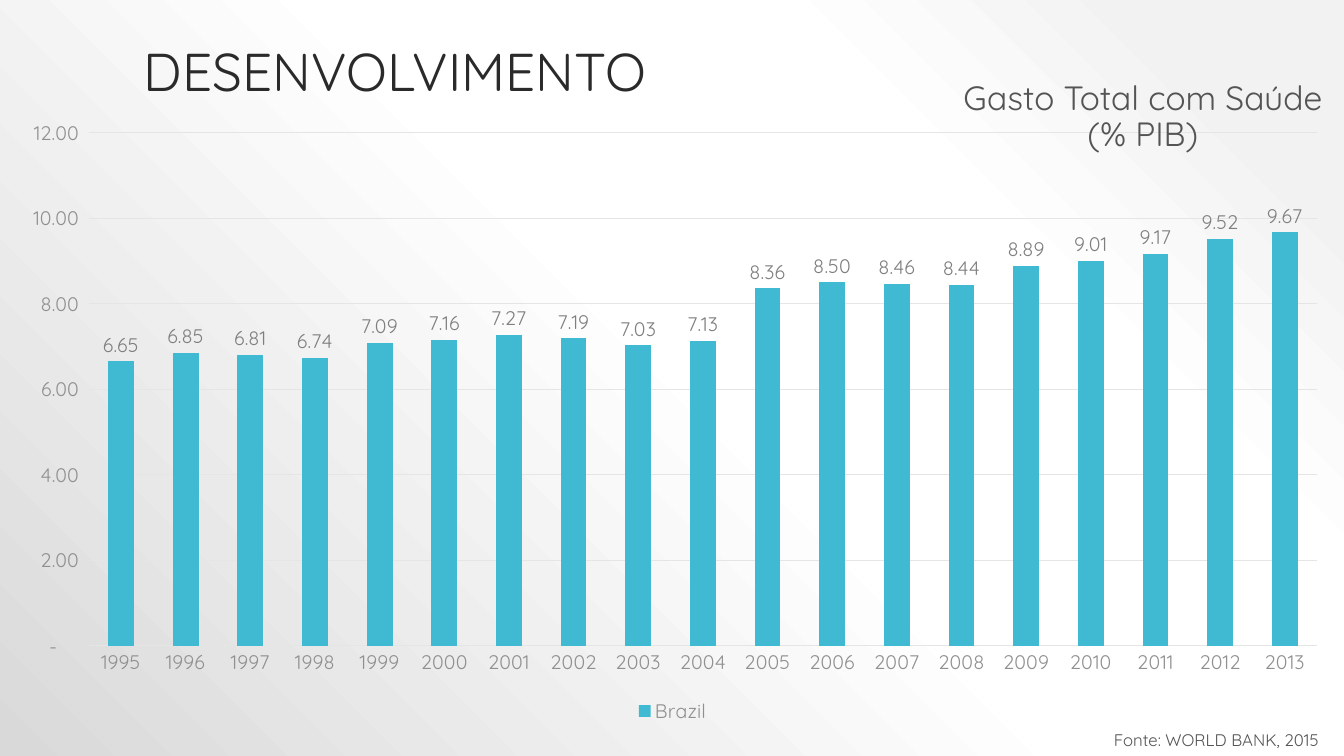
from lxml import etree
from pptx import Presentation
from pptx.chart.data import CategoryChartData
from pptx.dml.color import RGBColor
from pptx.enum.chart import XL_CHART_TYPE, XL_LABEL_POSITION, XL_LEGEND_POSITION, XL_TICK_MARK
from pptx.enum.text import MSO_ANCHOR, PP_ALIGN
from pptx.oxml import parse_xml
from pptx.util import Inches, Pt

COLUMNS = XL_CHART_TYPE.COLUMN_CLUSTERED
OUTSIDE = XL_LABEL_POSITION.OUTSIDE_END
BOTTOM_LEGEND = XL_LEGEND_POSITION.BOTTOM
NO_TICK = XL_TICK_MARK.NONE
TOP, BOTTOM = MSO_ANCHOR.TOP, MSO_ANCHOR.BOTTOM
LEFT, CENTER = PP_ALIGN.LEFT, PP_ALIGN.CENTER

# Content
FONT = "Quicksand"
COLORS = {"title": "2A2A2A", "text": "545454", "axis": "909090",
          "label": "7F7F7F", "grid": "E5E5E5", "bar": "40BAD2"}
BACKGROUND_STOPS = [(10, "F2F2F2"), (28, "FFFFFF"), (48, "FFFFFF"), (100, "D9D9D9")]
FIRST_YEAR = 1995
SERIES_NAME = "Brazil"
SPENDING = [6.65, 6.85, 6.81, 6.74, 7.09, 7.16, 7.27, 7.19, 7.03, 7.13,
            8.36, 8.50, 8.46, 8.44, 8.89, 9.01, 9.17, 9.52, 9.67]
NUMBER_FORMAT = '_(* #,##0.00_);_(* \\(#,##0.00\\);_(* "-"??_);_(@_)'
CHART_AREA = (0.01, 1.07, 13.32, 6.15)
# lines, area, size, color, alignment, anchor, wrap
TEXTS = [
    (["DESENVOLVIMENTO"], (1.33, 0.3, 10.67, 0.77), 38, "title", LEFT, BOTTOM, True),
    (["Fonte: WORLD BANK, 2015"], (10.95, 7.21, 2.33, 0.28), 12, "text", LEFT, TOP, False),
    (["Gasto Total com Saúde", "(% PIB)"], (9.31, 0.76, 4.05, 0.83), 24, "text",
     CENTER, TOP, False),
]


def color(name):
    return RGBColor.from_string(COLORS[name])


def style_font(font, size, name):
    font.name = FONT
    font.size = Pt(size)
    font.color.rgb = color(name)


def style_line(line):
    line.color.rgb = color("grid")
    line.width = Pt(0.75)


def paint_background(page):
    page.background.fill.gradient()
    gradient = next(page.element.iter("{*}gradFill"))
    stops = "".join(f'<a:gs pos="{share * 1000}"><a:srgbClr val="{tone}"/></a:gs>'
                    for share, tone in BACKGROUND_STOPS)
    radial = parse_xml(
        '<a:gradFill xmlns:a="http://schemas.openxmlformats.org/drawingml/2006/main" '
        f'rotWithShape="1"><a:gsLst>{stops}</a:gsLst><a:path path="circle">'
        '<a:fillToRect l="100000" b="100000"/></a:path></a:gradFill>')
    gradient.getparent().replace(gradient, radial)


def add_spending_chart(page):
    data = CategoryChartData(number_format=NUMBER_FORMAT)
    data.categories = [str(FIRST_YEAR + step) for step in range(len(SPENDING))]
    data.add_series(SERIES_NAME, SPENDING)
    chart = page.shapes.add_chart(COLUMNS, *map(Inches, CHART_AREA), data).chart
    chart.has_title = False
    style_font(chart.font, 14, "text")

    # Axes
    for axis in (chart.category_axis, chart.value_axis):
        axis.major_tick_mark = axis.minor_tick_mark = NO_TICK
        style_font(axis.tick_labels.font, 14, "axis")
    style_line(chart.category_axis.format.line)
    values = chart.value_axis
    values.minimum_scale, values.maximum_scale, values.major_unit = 0, 12, 2
    values.format.line.fill.background()
    style_line(values.major_gridlines.format.line)
    values.tick_labels.number_format = NUMBER_FORMAT
    values.tick_labels.number_format_is_linked = False

    # Legend
    chart.has_legend = True
    chart.legend.position = BOTTOM_LEGEND
    chart.legend.include_in_layout = False
    style_font(chart.legend.font, 14, "axis")

    # Columns and their labels
    plot = chart.plots[0]
    plot.gap_width = 150
    plot.vary_by_categories = False
    series = plot.series[0]
    series.format.fill.solid()
    series.format.fill.fore_color.rgb = color("bar")
    labels = series.data_labels
    labels.show_value = True
    labels.position = OUTSIDE
    labels.number_format = NUMBER_FORMAT
    labels.number_format_is_linked = False
    style_font(labels.font, 14, "label")


def add_text(page, lines, area, size, tone, alignment, anchor, wrap):
    frame = page.shapes.add_textbox(*map(Inches, area)).text_frame
    frame.text = "\n".join(lines)
    frame.word_wrap = wrap
    frame.vertical_anchor = anchor
    for para in frame.paragraphs:
        para.alignment = alignment
        para.line_spacing = 0.9
        for span in para.runs:
            style_font(span.font, size, tone)


def main():
    deck = Presentation()
    deck.slide_width, deck.slide_height = Inches(13.33), Inches(7.5)
    page = deck.slides.add_slide(deck.slide_layouts[6])
    paint_background(page)
    title, *captions = TEXTS
    add_text(page, *title)
    add_spending_chart(page)
    for caption in captions:
        add_text(page, *caption)
    deck.save("out.pptx")


if __name__ == "__main__":
    main()
